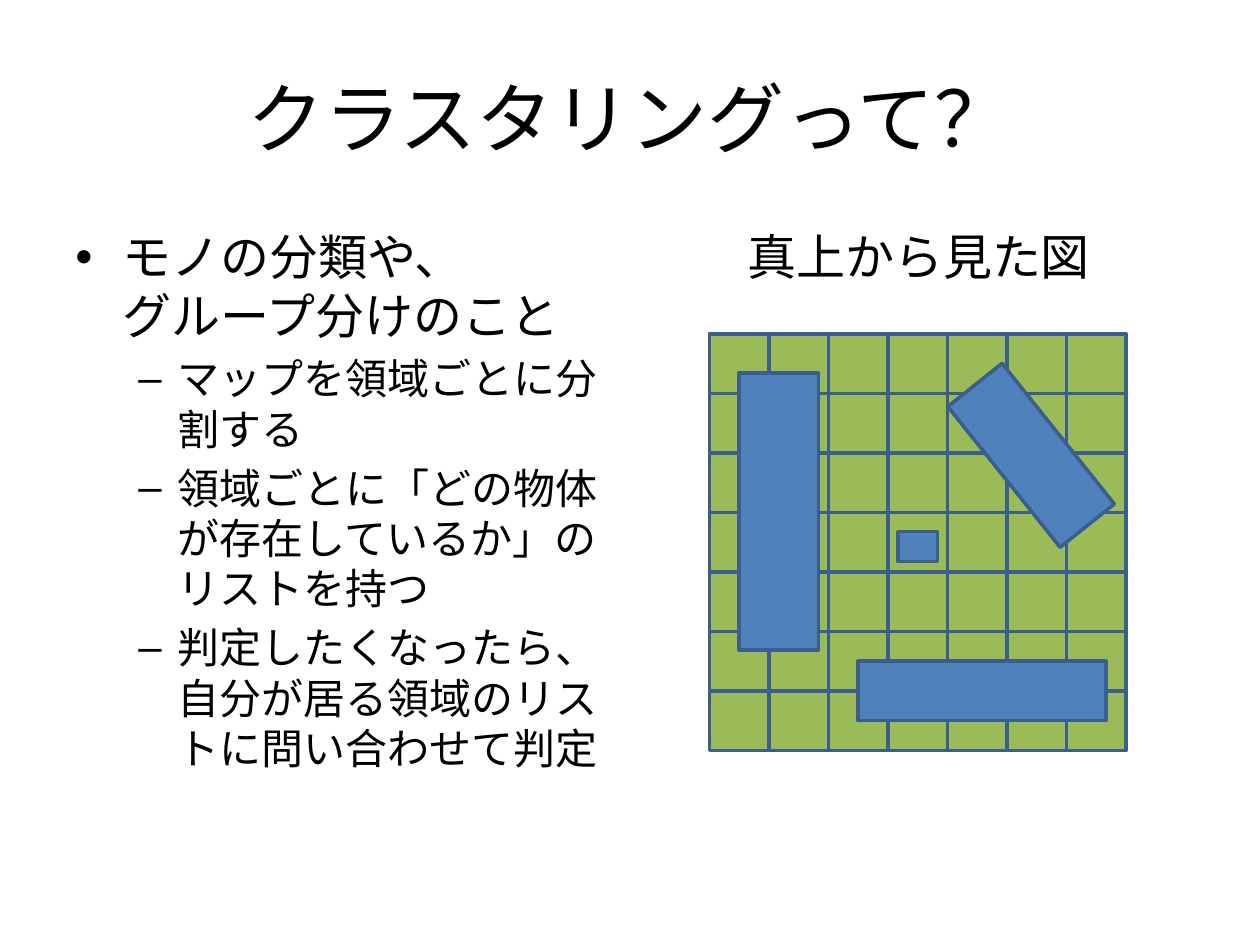
import pptx
import pptx.util
import pptx.dml.color
import pptx.enum.shapes
import pptx.enum.text
import pptx.oxml.ns
from lxml import etree

Cm = pptx.util.Cm
Pt = pptx.util.Pt
ALIGN = pptx.enum.text.PP_ALIGN
ANCHOR = pptx.enum.text.MSO_ANCHOR

FONT = "Noto Sans CJK JP"
BLACK, GREEN, BLUE, EDGE = "000000", "9BBB59", "4F81BD", "3A5F8C"

TITLE = "クラスタリングって？"
CAPTION = "真上から見た図"
TOPIC = "モノの分類や、\vグループ分けのこと"
POINTS = [
    "マップを領域ごとに分割する",
    "領域ごとに「どの物体が存在しているか」のリストを持つ",
    "判定したくなったら、自分が居る領域のリストに問い合わせて判定",
]
LEVELS = {
    0: dict(size=28, bullet="•", indent=(0.95, -0.95)),
    1: dict(size=24, bullet="–", indent=(2.06, -0.79)),
}
COUNT, CELL = 7, 1.2
GRID_X, GRID_Y = 14.3, 6.73
BLOCKS = [
    (14.9, 7.52, 1.6, 5.59, 0),
    (17.3, 13.33, 5, 1.2, 0),
    (18.1, 10.72, 0.8, 0.6, 0),
    (18.97, 8.48, 3.63, 1.4, 51.4),
]


def color(code):
    return pptx.dml.color.RGBColor.from_string(code)


def add_box(slide, x, y, w, h, anchor=ANCHOR.TOP):
    frame = slide.shapes.add_textbox(Cm(x), Cm(y), Cm(w), Cm(h)).text_frame
    frame.word_wrap = True
    frame.vertical_anchor = anchor
    return frame


def write(frame, text, size=28, align=ALIGN.LEFT, level=0,
          bullet=None, indent=None, lead=None):
    para = frame.paragraphs[0]
    if para.runs:
        para = frame.add_paragraph()
    para.text = text
    para.alignment = align
    para.level = level
    if lead:
        para.line_spacing = Pt(round(size * lead, 1))
        para.space_before = Pt(round(size * 0.2, 1))
    for run in para.runs:
        run.font.size = Pt(size)
        run.font.name = FONT
        run.font.color.rgb = color(BLACK)
        east = etree.SubElement(run.font._element, pptx.oxml.ns.qn("a:ea"))
        east.set("typeface", FONT)
    if bullet:
        props = para._p.get_or_add_pPr()
        left, first = indent
        props.set("marL", str(Cm(left)))
        props.set("indent", str(Cm(first)))
        face = etree.SubElement(props, pptx.oxml.ns.qn("a:buFont"))
        face.set("typeface", "Arial")
        mark = etree.SubElement(props, pptx.oxml.ns.qn("a:buChar"))
        mark.set("char", bullet)


def add_rect(slide, x, y, w, h, fill, turn=0):
    rect = slide.shapes.add_shape(
        pptx.enum.shapes.MSO_SHAPE.RECTANGLE, Cm(x), Cm(y), Cm(w), Cm(h))
    rect.shadow.inherit = False
    rect.fill.solid()
    rect.fill.fore_color.rgb = color(fill)
    rect.line.color.rgb = color(EDGE)
    rect.line.width = Pt(2)
    rect.rotation = turn


def main():
    deck = pptx.Presentation()
    deck.slide_width, deck.slide_height = Cm(25.4), Cm(19.05)
    slide = deck.slides.add_slide(deck.slide_layouts[6])

    head = add_box(slide, 1.27, 0.76, 22.86, 3.18, ANCHOR.MIDDLE)
    write(head, TITLE, size=44, align=ALIGN.CENTER)

    body = add_box(slide, 1.27, 4.45, 11.22, 12.57)
    for level, text in [(0, TOPIC)] + [(1, point) for point in POINTS]:
        write(body, text, level=level, lead=1.2, **LEVELS[level])

    label = add_box(slide, 12.91, 4.45, 11.22, 12.57)
    write(label, CAPTION, align=ALIGN.CENTER, lead=1.2)

    for row in range(COUNT):
        for col in range(COUNT):
            add_rect(slide, GRID_X + col * CELL, GRID_Y + row * CELL,
                     CELL, CELL, GREEN)
    for x, y, w, h, turn in BLOCKS:
        add_rect(slide, x, y, w, h, BLUE, turn)

    deck.save("out.pptx")


if __name__ == "__main__":
    main()
